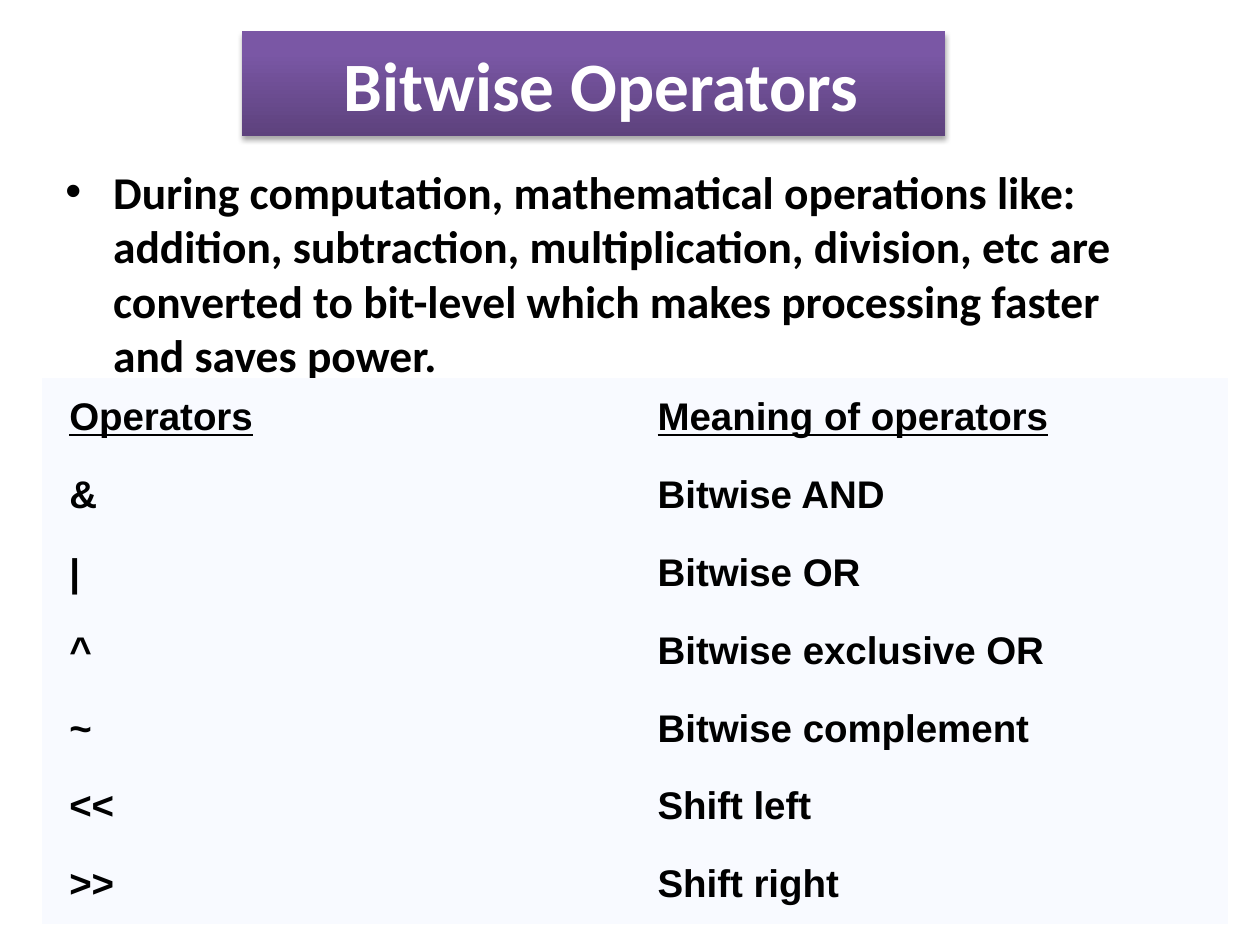
from lxml import etree
from pptx import Presentation
from pptx import util as u
from pptx.dml.color import RGBColor
from pptx.enum import shapes, text
from pptx.oxml import ns

ROWS = [
    ("Operators", "Meaning of operators"),
    ("&", "Bitwise AND"),
    ("|", "Bitwise OR"),
    ("^", "Bitwise exclusive OR"),
    ("~", "Bitwise complement"),
    ("<<", "Shift left"),
    (">>", "Shift right"),
]
INTRO = (
    "During computation, mathematical operations like: addition, subtraction, "
    "multiplication, division, etc are converted to bit-level which makes "
    "processing faster and saves power."
)


def color(value):
    return RGBColor.from_string(value)


def apply(target, values):
    for name, value in values.items():
        setattr(target, name, value)


def child(parent, tag, **values):
    return etree.SubElement(parent, ns.qn(tag), values)


def write(frame, content, ink, **font):
    para = frame.paragraphs[0]
    span = para.add_run()
    span.text = content
    span.font.color.rgb = color(ink)
    apply(span.font, {"bold": True, **font})
    return para


def add_shadow(shape):
    shape.shadow.inherit = False
    effects = shape._element.spPr.find(ns.qn("a:effectLst"))
    shadow = child(effects, "a:outerShdw", blurRad=str(u.Pt(3.1)),
                   dist=str(u.Pt(1.8)), dir="5400000", rotWithShape="0")
    ink = child(shadow, "a:srgbClr", val="000000")
    child(ink, "a:alpha", val="35000")


def add_title(slide, content):
    banner = slide.shapes.add_shape(
        shapes.MSO_SHAPE.RECTANGLE,
        u.Inches(1.92), u.Inches(0.25), u.Inches(5.58), u.Inches(0.83))
    banner.line.fill.background()
    banner.fill.gradient()
    banner.fill.gradient_angle = 90
    stops = ((0, "5D427D"), (0.8, "7A57A5"))
    for stop, (position, value) in zip(banner.fill.gradient_stops, stops):
        stop.position = position
        stop.color.rgb = color(value)
    add_shadow(banner)
    frame = banner.text_frame
    apply(frame, {"margin_left": u.Inches(0.22), "margin_right": u.Inches(0.1),
                  "vertical_anchor": text.MSO_ANCHOR.MIDDLE})
    para = write(frame, content, "FFFFFF", name="Calibri", size=u.Pt(39.6))
    para.alignment = text.PP_ALIGN.CENTER


def add_bullet(slide, content):
    box = slide.shapes.add_textbox(
        u.Inches(0.42), u.Inches(1.25), u.Inches(9), u.Inches(1.42))
    box.text_frame.word_wrap = True
    para = write(box.text_frame, content, "000000", name="Calibri", size=u.Pt(26))
    layout = para._p.get_or_add_pPr()
    indent = u.Inches(0.38)
    layout.set("marL", str(indent))
    layout.set("indent", str(-indent))
    child(layout, "a:buFont", typeface="Arial")
    child(layout, "a:buChar", char="•")


def add_operator_table(slide, rows):
    widths = (4.67, 4.75)
    height = u.Inches(4.33)
    table = slide.shapes.add_table(
        len(rows), len(widths), u.Inches(0.33), u.Inches(3),
        u.Inches(sum(widths)), height).table
    apply(table, {"first_row": False, "horz_banding": False})
    for column, width in zip(table.columns, widths):
        column.width = u.Inches(width)
    side, edge = u.Inches(0.22), u.Inches(0.11)
    layout = {"margin_left": side, "margin_right": side,
              "margin_top": edge, "margin_bottom": edge,
              "vertical_anchor": text.MSO_ANCHOR.MIDDLE}
    for index, row in enumerate(rows):
        for column, content in enumerate(row):
            cell = table.cell(index, column)
            apply(cell, layout)
            cell.fill.solid()
            cell.fill.fore_color.rgb = color("F8FAFF")
            write(cell.text_frame, content, "000000", name="Arial",
                  size=u.Pt(22), underline=index == 0)
            borders = cell._tc.get_or_add_tcPr()
            for place, side_tag in enumerate(("a:lnL", "a:lnR", "a:lnT", "a:lnB")):
                border = etree.Element(ns.qn(side_tag), w="0")
                child(border, "a:noFill")
                borders.insert(place, border)


def main():
    deck = Presentation()
    apply(deck, {"slide_width": u.Inches(10), "slide_height": u.Inches(7.5)})
    slide = deck.slides.add_slide(deck.slide_layouts[6])
    add_title(slide, "Bitwise Operators")
    add_bullet(slide, INTRO)
    add_operator_table(slide, ROWS)
    deck.save("out.pptx")


if __name__ == "__main__":
    main()
